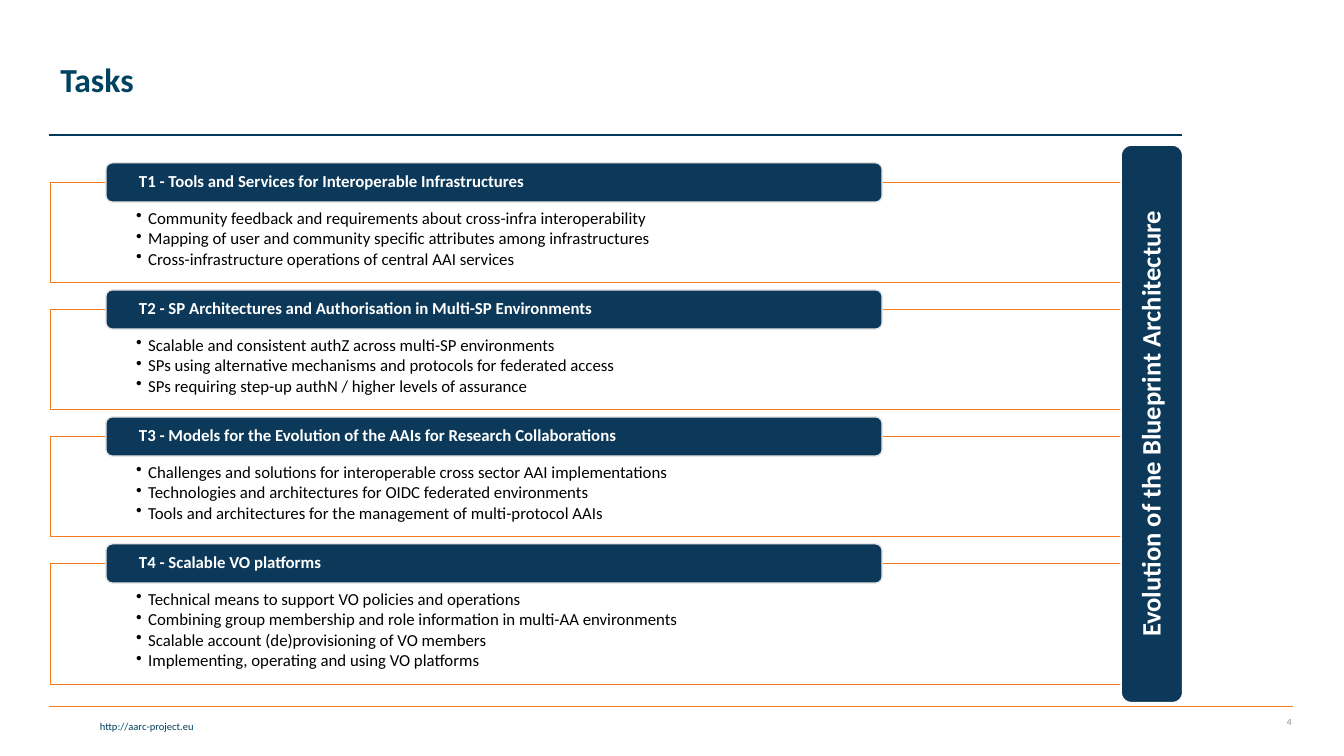
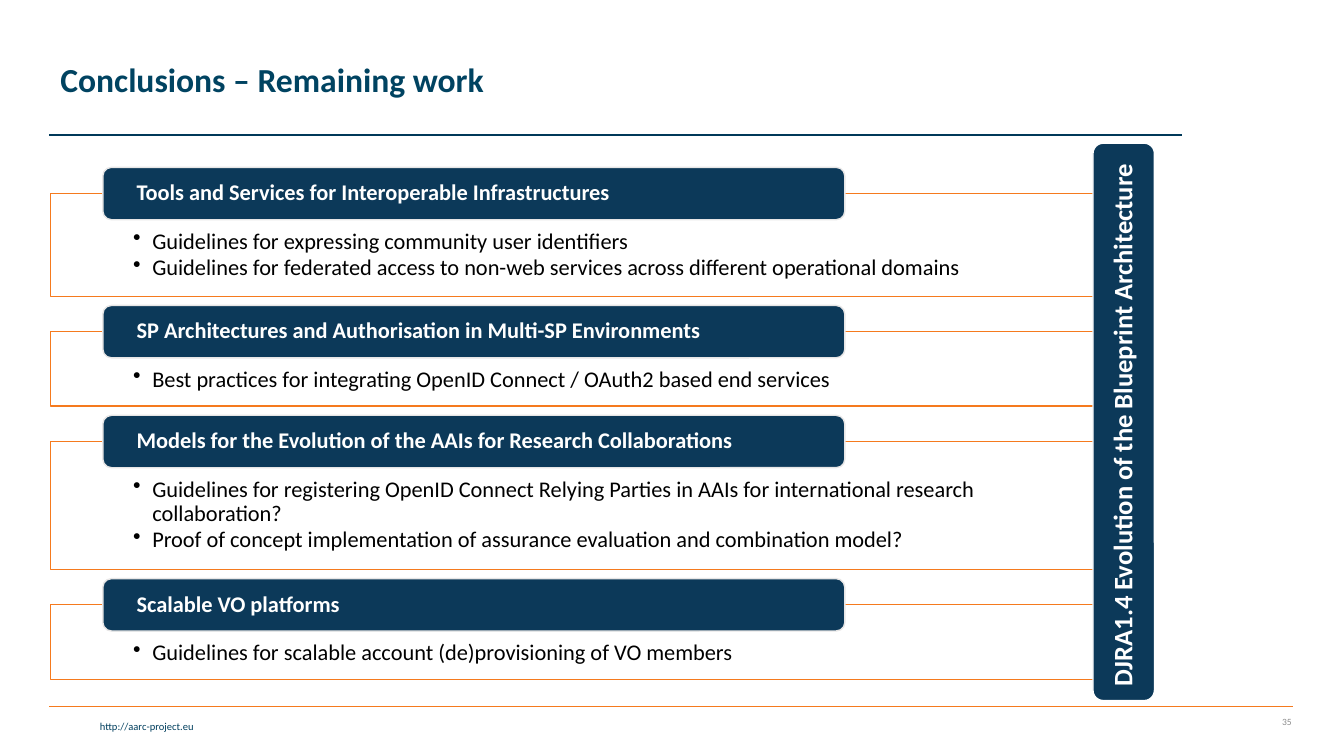
from lxml import etree
from pptx import Presentation
from pptx.dml.color import RGBColor
from pptx.enum.shapes import MSO_CONNECTOR, MSO_SHAPE
from pptx.enum.text import MSO_ANCHOR, PP_ALIGN
from pptx.oxml.ns import qn
from pptx.util import Inches, Pt

RECT, ROUND = MSO_SHAPE.RECTANGLE, MSO_SHAPE.ROUNDED_RECTANGLE
STRAIGHT = MSO_CONNECTOR.STRAIGHT
TOP, MIDDLE = MSO_ANCHOR.TOP, MSO_ANCHOR.MIDDLE
LEFT, CENTER, RIGHT = PP_ALIGN.LEFT, PP_ALIGN.CENTER, PP_ALIGN.RIGHT

COLORS = {
    "orange": "F57A1E",
    "navy": "0C3959",
    "rule": "003959",
    "title": "004361",
    "link": "003F5E",
    "number": "8C8C8C",
    "edge": "E7E6E6",
    "text": "000000",
    "white": "FFFFFF",
}

TASKS = [
    ("T1 - Tools and Services for Interoperable Infrastructures", 0.99, [
        "Community feedback and requirements about cross-infra interoperability",
        "Mapping of user and community specific attributes among infrastructures",
        "Cross-infrastructure operations of central AAI services",
    ]),
    ("T2 - SP Architectures and Authorisation in Multi-SP Environments", 0.99, [
        "Scalable and consistent authZ across multi-SP environments",
        "SPs using alternative mechanisms and protocols for federated access",
        "SPs requiring step-up authN / higher levels of assurance",
    ]),
    ("T3 - Models for the Evolution of the AAIs for Research Collaborations", 0.99, [
        "Challenges and solutions for interoperable cross sector AAI implementations",
        "Technologies and architectures for OIDC federated environments",
        "Tools and architectures for the management of multi-protocol AAIs",
    ]),
    ("T4 - Scalable VO platforms", 1.2, [
        "Technical means to support VO policies and operations",
        "Combining group membership and role information in multi-AA environments",
        "Scalable account (de)provisioning of VO members",
        "Implementing, operating and using VO platforms",
    ]),
]

REMAINING = [
    ("Tools and Services for Interoperable Infrastructures", 1.02, [
        "Guidelines for expressing community user identifiers",
        "Guidelines for federated access to non-web services across different operational domains",
    ]),
    ("SP Architectures and Authorisation in Multi-SP Environments", 0.74, [
        "Best practices for integrating OpenID Connect / OAuth2 based end services",
    ]),
    ("Models for the Evolution of the AAIs for Research Collaborations", 1.27, [
        "Guidelines for registering OpenID Connect Relying Parties in AAIs for international research collaboration?",
        "Proof of concept implementation of assurance evaluation and combination model?",
    ]),
    ("Scalable VO platforms", 0.74, [
        "Guidelines for scalable account (de)provisioning of VO members",
    ]),
]


def rgb(name):
    return RGBColor.from_string(COLORS[name])


def write(tf, lines, size=12, color="text", bold=False, align=LEFT, anchor=MIDDLE,
          insets=(0.1, 0.05, 0.1, 0.05), spacing=0.9, after=0, bullet=0):
    tf.word_wrap = True
    tf.vertical_anchor = anchor
    tf.margin_left, tf.margin_top, tf.margin_right, tf.margin_bottom = map(Inches, insets)
    for i, line in enumerate(lines):
        p = tf.add_paragraph() if i else tf.paragraphs[0]
        if bullet:
            pPr = p._p.get_or_add_pPr()
            pPr.set("marL", str(Inches(bullet)))
            pPr.set("indent", str(-Inches(bullet)))
            etree.SubElement(pPr, qn("a:buChar")).set("char", "•")
        p.alignment = align
        p.line_spacing = spacing
        p.space_after = Pt(after)
        r = p.add_run()
        r.text = line
        r.font.name = "Calibri"
        r.font.size = Pt(size)
        r.font.bold = bold
        r.font.color.rgb = rgb(color)


class Deck:
    """Holds the shared style and the slide being built."""

    def __init__(self):
        self.prs = Presentation()
        self.prs.slide_width, self.prs.slide_height = Inches(13.33), Inches(7.5)
        self.s = None

    def slide(self, title, number):
        self.s = self.prs.slides.add_slide(self.prs.slide_layouts[6])
        self.line(0.49, 12.82, 7.01, "orange")
        self.line(0.49, 11.72, 1.34, "rule")
        self.text(0.5, 0.08, 10.51, 1.45, title, size=24, color="title", bold=True)
        self.text(0.03, 7.09, 1.99, 0.23, "http://aarc-project.eu", size=7.5,
                  color="link", align=RIGHT, anchor=TOP, spacing=1)
        self.text(12.1, 7.01, 0.81, 0.3, number, size=6.8, color="number",
                  align=RIGHT, spacing=1)

    def line(self, x1, x2, y, color):
        c = self.s.shapes.add_connector(STRAIGHT, Inches(x1), Inches(y), Inches(x2), Inches(y))
        c.line.color.rgb = rgb(color)
        c.line.width = Pt(1)
        etree.SubElement(c._element.spPr, qn("a:effectLst"))

    def text(self, x, y, w, h, text, **style):
        sp = self.s.shapes.add_textbox(*map(Inches, (x, y, w, h)))
        write(sp.text_frame, [text], **style)

    def shape(self, kind, x, y, w, h, lines, edge, fill=None, **style):
        sp = self.s.shapes.add_shape(kind, *map(Inches, (x, y, w, h)))
        sp.shadow.inherit = False
        if fill:
            sp.fill.solid()
            sp.fill.fore_color.rgb = rgb(fill)
        else:
            sp.fill.background()
        sp.line.color.rgb = rgb(edge)
        sp.line.width = Pt(1)
        write(sp.text_frame, lines, **style)
        return sp

    def task_list(self, tasks, top, gap, width, size, tab, body_insets, bullet):
        tab_x, tab_w, tab_h = tab
        for heading, height, points in tasks:
            self.shape(RECT, 0.5, top, width, height, points, "orange", size=size,
                       anchor=TOP, insets=body_insets, after=1.7, bullet=bullet)
            self.shape(ROUND, tab_x, top - tab_h / 2, tab_w, tab_h, [heading], "edge",
                       "navy", size=size, color="white", bold=True,
                       insets=(0.31, 0, 0.31, 0))
            top += height + gap

    def side_bar(self, x, y, label, align):
        sp = self.shape(ROUND, x, y, 5.53, 0.61, [label], "white", "navy", size=19,
                        color="white", bold=True, align=align,
                        insets=(0.11, 0.08, 0.11, 0.08))
        sp.rotation = 270


def main():
    deck = Deck()
    deck.slide("Tasks", "4")
    deck.task_list(TASKS, top=1.81, gap=0.27, width=11, size=12, tab=(1.05, 7.7, 0.39),
                   body_insets=(0.85, 0.27, 0.85, 0.09), bullet=0.12)
    deck.side_bar(8.66, 3.9, "Evolution of the Blueprint Architecture", CENTER)

    deck.slide("Conclusions – Remaining work", "35")
    deck.task_list(REMAINING, top=1.92, gap=0.35, width=10.51, size=16, tab=(1.02, 7.36, 0.52),
                   body_insets=(0.82, 0.36, 0.82, 0.12), bullet=0.19)
    deck.side_bar(8.38, 3.88, "DJRA1.4 Evolution of the Blueprint Architecture", LEFT)
    deck.prs.save("out.pptx")


if __name__ == "__main__":
    main()
